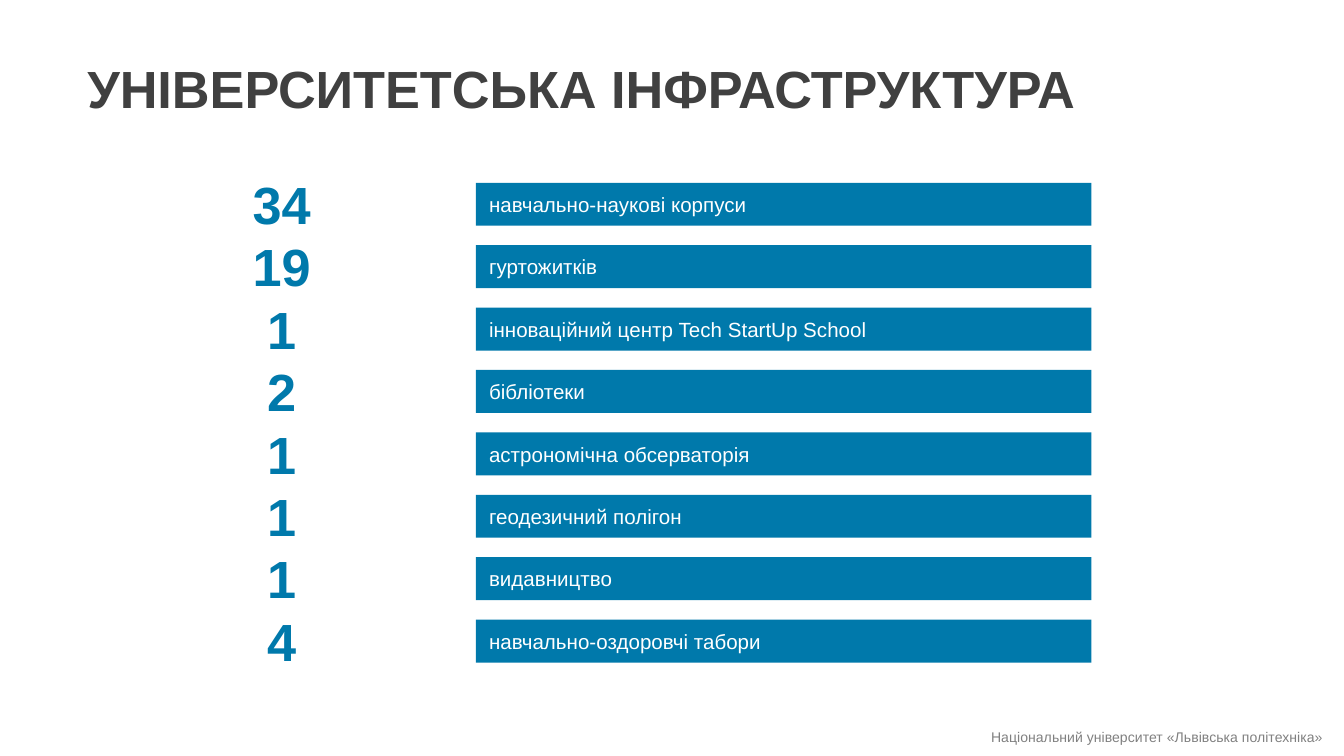
from pptx import Presentation
from pptx.dml.color import RGBColor
from pptx.enum.shapes import MSO_SHAPE as Shape
from pptx.enum.text import MSO_ANCHOR as Anchor, MSO_AUTO_SIZE as Fit, PP_ALIGN as Align
from pptx.util import Inches, Pt

BLUE, WHITE, DARK, GREY = "0079AB", "FFFFFF", "404040", "808080"
ROWS = [
    ("34", "навчально-наукові корпуси"),
    ("19", "гуртожитків"),
    ("1", "інноваційний центр Tech StartUp School"),
    ("2", "бібліотеки"),
    ("1", "астрономічна обсерваторія"),
    ("1", "геодезичний полігон"),
    ("1", "видавництво"),
    ("4", "навчально-оздоровчі табори"),
]
TOP, LAST = 1.36, 4.61
STEP = (LAST - TOP) / (len(ROWS) - 1)
LABEL = {"size": Pt(11), "bold": False}
BIG = {"size": Pt(28), "bold": True}
NOTE = {"size": Pt(13), "bold": False}
FRAME = {
    "margin_left": Inches(0.04), "margin_right": Inches(0.04),
    "margin_top": Inches(0.02), "margin_bottom": Inches(0.02),
    "auto_size": Fit.SHAPE_TO_FIT_TEXT,
}


def rgb(code):
    return RGBColor.from_string(code)


def apply(item, form):
    """Set each attribute named in form on item."""
    for name, value in form.items():
        setattr(item, name, value)


def write(frame, text, form, color, align=Align.LEFT):
    """Fill the frame with one styled run and return the run."""
    para = frame.paragraphs[0]
    para.alignment = align
    run = para.add_run()
    run.text = text
    apply(run.font, {"name": "Arial", **form})
    run.font.color.rgb = rgb(color)
    return run


def add_text(slide, box, text, form, color, align=Align.LEFT,
             anchor=Anchor.TOP, wrap=True):
    frame = slide.shapes.add_textbox(*map(Inches, box)).text_frame
    apply(frame, {**FRAME, "word_wrap": wrap, "vertical_anchor": anchor})
    return write(frame, text, form, color, align)


def add_bar(slide, box, text):
    bar = slide.shapes.add_shape(Shape.RECTANGLE, *map(Inches, box))
    bar.shadow.inherit = False
    bar.fill.solid()
    bar.fill.fore_color.rgb = rgb(BLUE)
    bar.line.fill.background()
    apply(bar.text_frame, {"word_wrap": True, "vertical_anchor": Anchor.MIDDLE})
    write(bar.text_frame, text, LABEL, WHITE)


def add_row(slide, top, count, label):
    add_bar(slide, (3.54, top, 4.58, 0.32), label)
    add_text(slide, (0.93, top - 0.1, 2.33, 0.51), count, BIG, BLUE,
             Align.CENTER, Anchor.MIDDLE)


def main():
    deck = Presentation()
    deck.slide_width = Inches(10)
    deck.slide_height = deck.slide_width * 9 // 16
    slide = deck.slides.add_slide(deck.slide_layouts[6])

    foot = add_text(slide, (6.49, 5.38, 3.39, 0.19),
                    "Національний університет «Львівська політехніка»",
                    NOTE, GREY, Align.RIGHT)
    foot._r.get_or_add_rPr().set("baseline", "30000")
    add_text(slide, (0.61, 0.4, 7.5, 0.51), "УНІВЕРСИТЕТСЬКА ІНФРАСТРУКТУРА",
             BIG, DARK, wrap=False)
    for i, (count, label) in enumerate(ROWS):
        add_row(slide, TOP + i * STEP, count, label)

    deck.save("out.pptx")


if __name__ == "__main__":
    main()
